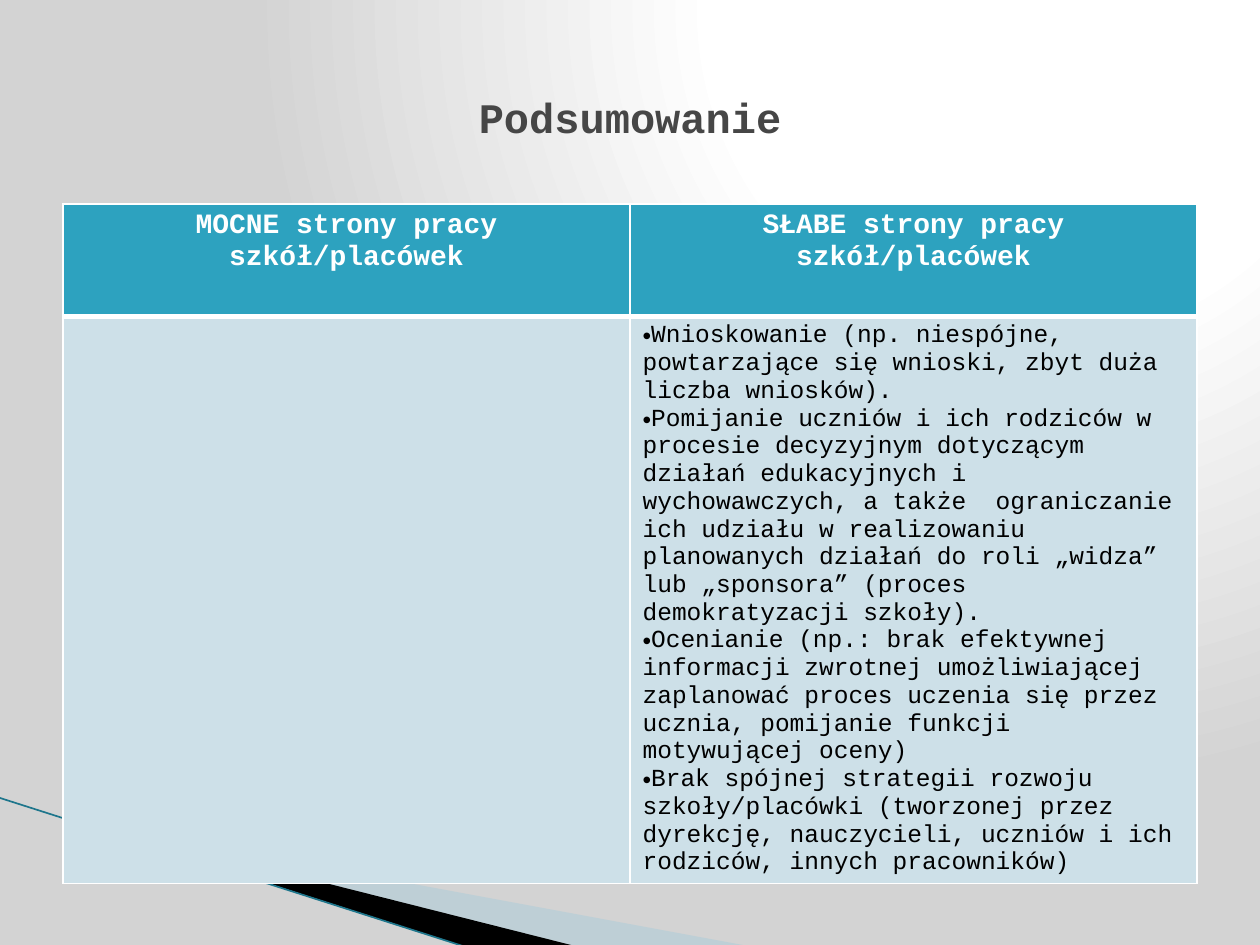
from lxml.etree import SubElement
from pptx import Presentation
from pptx.dml.color import RGBColor
from pptx.enum.text import MSO_ANCHOR, PP_ALIGN
from pptx.oxml import parse_xml
from pptx.oxml.ns import nsdecls, qn
from pptx.util import Inches, Pt

TITLE = "Podsumowanie"
HEADINGS = ["MOCNE strony pracy szkół/placówek", "SŁABE strony pracy szkół/placówek"]
STRENGTHS = []
WEAKNESSES = [
    "Wnioskowanie (np. niespójne, powtarzające się wnioski, zbyt duża liczba wniosków).",
    "Pomijanie uczniów i ich rodziców w procesie decyzyjnym dotyczącym działań "
    "edukacyjnych i wychowawczych, a także  ograniczanie ich udziału w realizowaniu "
    "planowanych działań do roli „widza” lub „sponsora” (proces demokratyzacji szkoły).",
    "Ocenianie (np.: brak efektywnej informacji zwrotnej umożliwiającej zaplanować "
    "proces uczenia się przez ucznia, pomijanie funkcji motywującej oceny)",
    "Brak spójnej strategii rozwoju szkoły/placówki (tworzonej przez dyrekcję, "
    "nauczycieli, uczniów i ich rodziców, innych pracowników)",
]

WHITE = RGBColor(0xFF, 0xFF, 0xFF)
BLACK = RGBColor(0, 0, 0)
GREY = RGBColor(0xD3, 0xD3, 0xD3)
TITLE_GREY = RGBColor(0x46, 0x46, 0x46)
TEAL = RGBColor(0x2D, 0xA2, 0xBF)
DARK_TEAL = RGBColor(0x1E, 0x76, 0x8C)
PALE_BLUE = RGBColor(0xCD, 0xE0, 0xE8)
SKY = RGBColor(0xA0, 0xCB, 0xDC)

FONT = "Courier New"
TITLE_FORMAT = dict(name=FONT, size=Pt(24), bold=True)
HEADING_FORMAT = dict(name=FONT, size=Pt(16), bold=True)
ITEM_FORMAT = dict(name=FONT, size=Pt(14), bold=False)

WIDTH, HEIGHT = Inches(10), Inches(7.5)
MARGIN = WIDTH // 20
CONTENT_WIDTH = WIDTH - 2 * MARGIN
ROW_HEIGHTS = [Inches(0.89), Inches(4.49)]
BACKDROP = [(0, WHITE), (40, WHITE), (100, GREY)]
SWOOSHES = [
    ([(0.55, 6.51), (5.95, 7.51), (4.56, 7.51), (0.55, 6.5)], SKY, 40),
    ([(0.53, 6.49), (4.57, 7.51), (3.72, 7.52), (0.54, 6.5)], BLACK, 100),
]
EDGE = [(-0.01, 6.33), (3.71, 7.52)]


def style(font, formats, color):
    for key, value in formats.items():
        setattr(font, key, value)
    font.color.rgb = color


def paint_background(slide):
    slide.background.fill.solid()
    stops = "".join(
        f'<a:gs pos="{share * 1000}"><a:srgbClr val="{color}"/></a:gs>'
        for share, color in BACKDROP
    )
    gradient = parse_xml(
        f'<a:gradFill {nsdecls("a")} rotWithShape="1"><a:gsLst>{stops}</a:gsLst>'
        '<a:path path="circle"><a:fillToRect l="65000" t="0" r="0" b="98000"/></a:path>'
        "</a:gradFill>"
    )
    solid = slide.element.find(".//" + qn("p:bgPr")).find(qn("a:solidFill"))
    solid.getparent().replace(solid, gradient)


def add_swoosh(slide, points, color, opacity):
    start, *rest = [(Inches(x), Inches(y)) for x, y in points]
    builder = slide.shapes.build_freeform(*start)
    builder.add_line_segments(rest)
    swoosh = builder.convert_to_shape()
    swoosh.shadow.inherit = False
    swoosh.fill.solid()
    swoosh.fill.fore_color.rgb = color
    swoosh.line.fill.background()
    if opacity < 100:
        tint = swoosh._element.spPr.find(qn("a:solidFill"))[0]
        SubElement(tint, qn("a:alpha"), val=str(opacity * 1000))


def add_edge(slide):
    ends = [Inches(value) for point in EDGE for value in point]
    edge = slide.shapes.add_connector(1, *ends)
    edge.line.color.rgb = DARK_TEAL
    edge.line.width = Pt(0.95)
    SubElement(edge._element.spPr, qn("a:effectLst"))


def set_cell(cell, color, widths):
    properties = cell._tc.get_or_add_tcPr()
    for side, width in widths.items():
        border = SubElement(properties, qn(f"a:ln{side}"), w=str(Pt(width)))
        SubElement(SubElement(border, qn("a:solidFill")), qn("a:srgbClr"), val=str(WHITE))
    cell.fill.solid()
    cell.fill.fore_color.rgb = color


def add_bullet(paragraph):
    properties = paragraph._p.get_or_add_pPr()
    properties.set("marL", "0")
    properties.set("indent", "0")
    SubElement(properties, qn("a:buFont"), typeface="Arial")
    SubElement(properties, qn("a:buChar"), char="•")


def add_summary(slide):
    table = slide.shapes.add_table(
        2, len(HEADINGS), MARGIN, Inches(1.62), CONTENT_WIDTH, sum(ROW_HEIGHTS)
    ).table
    for row, height in zip(table.rows, ROW_HEIGHTS):
        row.height = height
    for column, (heading, items) in enumerate(zip(HEADINGS, [STRENGTHS, WEAKNESSES])):
        header, body = table.cell(0, column), table.cell(1, column)
        set_cell(header, TEAL, dict(L=1, R=1, T=1, B=3))
        set_cell(body, PALE_BLUE, dict(L=1, R=1, T=3, B=1))
        header.text = heading
        paragraph = header.text_frame.paragraphs[0]
        paragraph.alignment = PP_ALIGN.CENTER
        style(paragraph.runs[0].font, HEADING_FORMAT, WHITE)
        body.text = "\n".join(items)
        for paragraph in body.text_frame.paragraphs[:len(items)]:
            add_bullet(paragraph)
            style(paragraph.runs[0].font, ITEM_FORMAT, BLACK)


def add_title(slide):
    title = slide.shapes.title
    title.left, title.top = MARGIN, Inches(0.3)
    title.width, title.height = CONTENT_WIDTH, Inches(1.25)
    title.text_frame.text = TITLE
    title.text_frame.vertical_anchor = MSO_ANCHOR.MIDDLE
    paragraph = title.text_frame.paragraphs[0]
    paragraph.alignment = PP_ALIGN.CENTER
    style(paragraph.runs[0].font, TITLE_FORMAT, TITLE_GREY)


def main():
    deck = Presentation()
    deck.slide_width, deck.slide_height = WIDTH, HEIGHT
    slide = deck.slides.add_slide(deck.slide_layouts[5])
    paint_background(slide)
    for swoosh in SWOOSHES:
        add_swoosh(slide, *swoosh)
    add_edge(slide)
    add_summary(slide)
    add_title(slide)
    deck.save("out.pptx")


if __name__ == "__main__":
    main()
